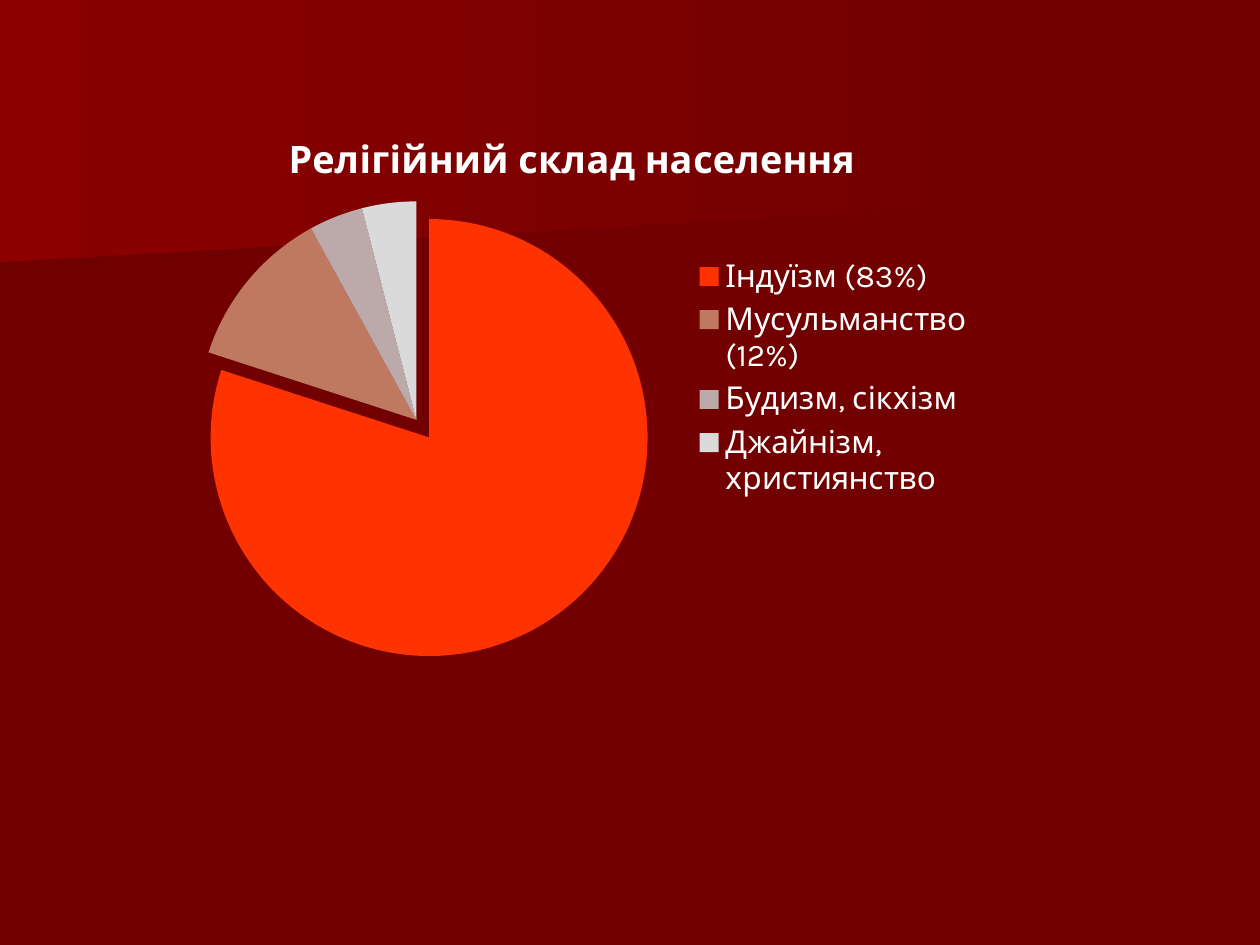
from lxml import etree
from pptx import Presentation
from pptx import util as u
from pptx.chart import data
from pptx.dml.color import RGBColor
from pptx.enum import chart as kinds
from pptx.oxml import ns

BASE = RGBColor(0x72, 0, 0)
SHADE = RGBColor(0x6F, 0, 0)
GLOW = RGBColor(0x8C, 0, 0)
WHITE = RGBColor(255, 255, 255)
FONT = "Karla"
TITLE = "Релігійний склад населення"
PARTS = [
    ("Індуїзм (83%)", 80, RGBColor(0xFF, 0x33, 0)),
    ("Мусульманство (12%)", 12, RGBColor(0xBE, 0x79, 0x60)),
    ("Будизм, сікхізм", 4, RGBColor(0xBC, 0xAA, 0xAA)),
    ("Джайнізм, християнство", 4, RGBColor(0xDA, 0xDA, 0xDA)),
]


def style(font, **extra):
    for key, val in {"name": FONT, "size": u.Pt(18), "bold": False, **extra}.items():
        setattr(font, key, val)
    font.color.rgb = WHITE


def place(home, **spots):
    for old in home.findall(ns.qn("c:layout")):
        home.remove(old)
    layout = etree.Element(ns.qn("c:layout"))
    manual = etree.SubElement(layout, ns.qn("c:manualLayout"))
    for key, val in spots.items():
        etree.SubElement(manual, ns.qn("c:" + key), val=str(val))
    return layout


prs = Presentation()
prs.slide_width, prs.slide_height = u.Inches(10), u.Inches(7.5)
slide = prs.slides.add_slide(prs.slide_layouts[6])
back = slide.background.fill
back.solid()
back.fore_color.rgb = BASE

bands = [
    (SHADE, [(0, 1.01), (7.79, 1.01), (7.78, 1.53), (0, 2.17)]),
    (GLOW, [(0, 0), (7.92, 0), (7.92, 1.62), (0, 2.08)]),
]
for tint, spots in bands:
    spots = [(u.Inches(x), u.Inches(y)) for x, y in spots]
    pen = slide.shapes.build_freeform(*spots[0])
    pen.add_line_segments(spots[1:], close=True)
    band = pen.convert_to_shape()
    band.shadow.inherit = False
    band.line.fill.background()
    band.fill.gradient()
    band.fill.gradient_angle = 0
    for stop, color, pos in zip(band.fill.gradient_stops, (tint, BASE), (0, 1)):
        stop.color.rgb = color
        stop.position = pos

pie = data.CategoryChartData()
pie.categories = [name for name, _, _ in PARTS]
pie.add_series(TITLE, [val for _, val, _ in PARTS])
box = [u.Inches(n) for n in (1.17, 0.78, 6.67, 4.44)]
chart = slide.shapes.add_chart(kinds.XL_CHART_TYPE.PIE, *box, pie).chart
style(chart.font)

chart.has_title = True
head = chart.chart_title
head.text_frame.text = TITLE
style(head.text_frame.paragraphs[0].runs[0].font, size=u.Pt(21.6), bold=True)
head.include_in_layout = False
root = head._element
root.find(ns.qn("c:tx")).addnext(place(root, xMode="edge", yMode="edge", x=0.16, y=0.05))

chart.has_legend = True
chart.legend.position = kinds.XL_LEGEND_POSITION.RIGHT
chart.legend.include_in_layout = False
style(chart.legend.font)

plot = chart.plots[0]
plot.vary_by_categories = True
for i, (_, _, color) in enumerate(PARTS):
    look = plot.series[0].points[i].format
    look.fill.solid()
    look.fill.fore_color.rgb = color
    look.line.fill.background()

first = plot.series[0]._element.find(ns.qn("c:dPt"))
burst = etree.Element(ns.qn("c:explosion"), val="10")
first.find(ns.qn("c:spPr")).addprevious(burst)

area = plot._element.getparent()
area.insert(0, place(area, layoutTarget="inner", xMode="edge", yMode="edge",
                     x=0.06, y=0.18, w=0.52, h=0.79))

prs.save("out.pptx")
